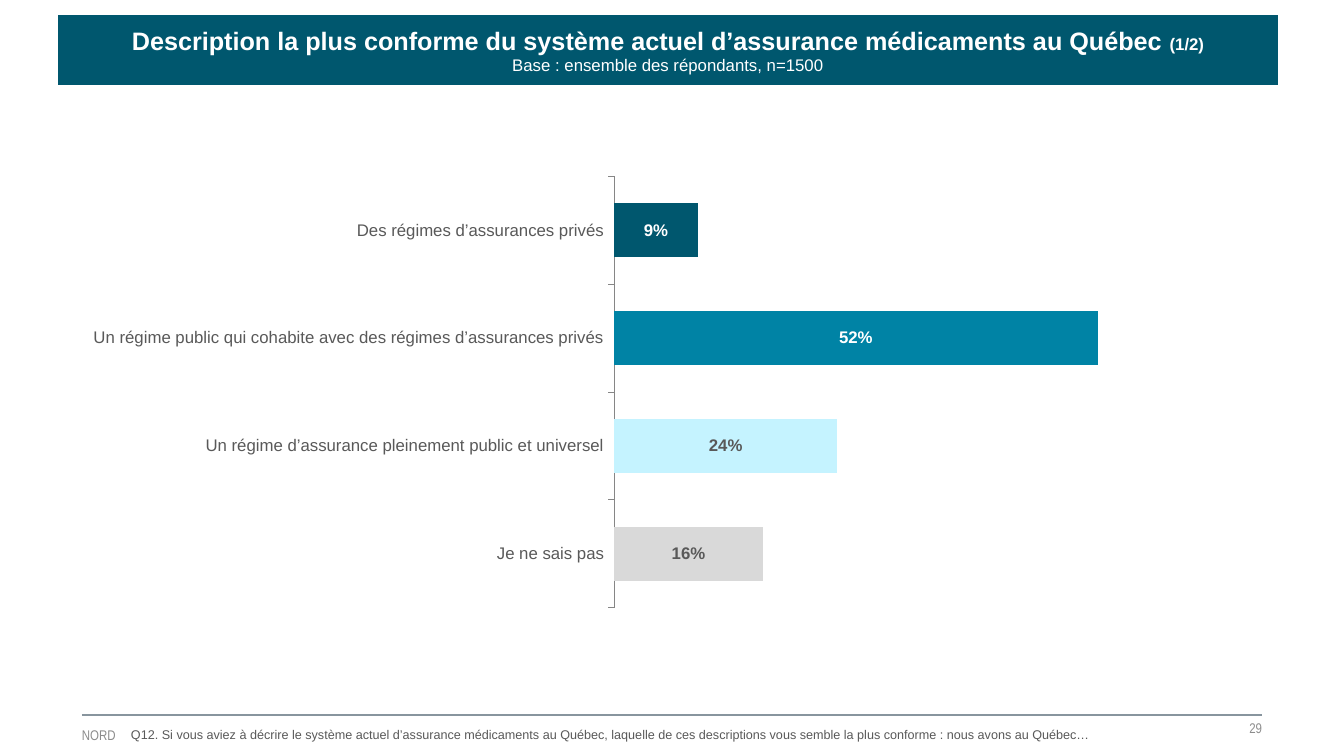
from lxml import etree
from pptx import Presentation
from pptx.chart.data import CategoryChartData
from pptx.dml.color import RGBColor
from pptx.enum.chart import XL_CHART_TYPE, XL_LABEL_POSITION, XL_TICK_MARK
from pptx.enum.shapes import MSO_CONNECTOR
from pptx.enum.text import MSO_ANCHOR, MSO_AUTO_SIZE, PP_ALIGN
from pptx.oxml.ns import qn
from pptx.util import Pt

BAR_CLUSTERED = XL_CHART_TYPE.BAR_CLUSTERED
LABEL_CENTER = XL_LABEL_POSITION.CENTER
TICK_OUT, TICK_NONE = XL_TICK_MARK.OUTSIDE, XL_TICK_MARK.NONE
STRAIGHT = MSO_CONNECTOR.STRAIGHT
MIDDLE, TOP = MSO_ANCHOR.MIDDLE, MSO_ANCHOR.TOP
LEFT, CENTER, RIGHT = PP_ALIGN.LEFT, PP_ALIGN.CENTER, PP_ALIGN.RIGHT

EMU_PER_PX = 914400 / 100.8
TEAL, WHITE, DARK_GREY, FOOTER_GREY = "00576E", "FFFFFF", "595959", "8C8C8C"

# Title lines: runs of (text, size, bold)
TITLE_LINES = [
    [("Description la plus conforme du système actuel d’assurance médicaments au Québec ", 18, True),
     ("(1/2)", 12, True)],
    [("Base : ensemble des répondants, n=1500", 12, False)],
]
TITLE_BOX = (58, 15, 1220, 70)

# Answer, share, bar colour, label colour
ANSWERS = [
    ("Des régimes d’assurances privés", 0.09, TEAL, WHITE),
    ("Un régime public qui cohabite avec des régimes d’assurances privés", 0.52, "0083A5", WHITE),
    ("Un régime d’assurance pleinement public et universel", 0.24, "C5F3FF", DARK_GREY),
    ("Je ne sais pas", 0.16, "D9D9D9", DARK_GREY),
]
CHART_BOX = (10, 167, 1162, 474)
PLOT_AREA = {"x": 0.52, "y": 0.02, "w": 0.48, "h": 0.91}

# Text, box, size, font, colour, alignment, anchor, (side inset, top inset)
FOOTER = [
    ("29", (880, 715, 382, 26), 10, "Arial Narrow", FOOTER_GREY, RIGHT, MIDDLE, (0, 0)),
    ("NORD", (82, 722, 376, 26), 10, "Arial Narrow", FOOTER_GREY, LEFT, MIDDLE, (0, 0)),
    ("Q12. Si vous aviez à décrire le système actuel d’assurance médicaments au Québec, "
     "laquelle de ces descriptions vous semble la plus conforme\u00a0: nous avons au Québec…",
     (121, 722, 1139, 25), 9, "Arial", DARK_GREY, LEFT, TOP, (10, 5)),
]
FOOTER_RULE = (82, 715, 1262, 715)


def px(*lengths):
    return [round(length * EMU_PER_PX) for length in lengths]


def rgb(code):
    return RGBColor.from_string(code)


def style(font, size, color, name="Arial", bold=False):
    font.size, font.name, font.bold = Pt(size), name, bold
    font.color.rgb = rgb(color)


def set_frame(frame, anchor, insets):
    side, top = px(*insets)
    frame.word_wrap = True
    frame.auto_size = MSO_AUTO_SIZE.NONE
    frame.vertical_anchor = anchor
    frame.margin_left = frame.margin_right = side
    frame.margin_top = frame.margin_bottom = top


def add_title(slide):
    title = slide.shapes.title
    title.left, title.top, title.width, title.height = px(*TITLE_BOX)
    title.fill.solid()
    title.fill.fore_color.rgb = rgb(TEAL)
    frame = title.text_frame
    set_frame(frame, MIDDLE, (0, 0))
    for index, line in enumerate(TITLE_LINES):
        paragraph = frame.add_paragraph() if index else frame.paragraphs[0]
        paragraph.alignment = CENTER
        for text, size, bold in line:
            run = paragraph.add_run()
            run.text = text
            style(run.font, size, WHITE, bold=bold)


def fix_plot_area(chart):
    """Pin the inner plot area to fractions of the chart."""
    plot_area = chart.element.find(".//" + qn("c:plotArea"))
    for automatic in plot_area.findall(qn("c:layout")):
        plot_area.remove(automatic)
    layout = etree.Element(qn("c:layout"))
    plot_area.insert(0, layout)
    manual = etree.SubElement(layout, qn("c:manualLayout"))
    settings = [("layoutTarget", "inner"), ("xMode", "edge"), ("yMode", "edge")]
    for tag, value in settings + list(PLOT_AREA.items()):
        etree.SubElement(manual, qn("c:" + tag)).set("val", str(value))


def add_answer_chart(slide):
    data = CategoryChartData(number_format="0%")
    data.categories = [answer[0] for answer in ANSWERS]
    data.add_series("Répondants", [answer[1] for answer in ANSWERS])
    chart = slide.shapes.add_chart(BAR_CLUSTERED, *px(*CHART_BOX), data).chart
    chart.has_legend = chart.has_title = False
    style(chart.font, 12, DARK_GREY)
    fix_plot_area(chart)

    answers_axis = chart.category_axis
    answers_axis.reverse_order = True
    answers_axis.major_tick_mark = TICK_OUT
    answers_axis.minor_tick_mark = TICK_NONE
    answers_axis.has_major_gridlines = False
    answers_axis.format.line.color.rgb = rgb("868686")
    answers_axis.format.line.width = Pt(0.75)
    style(answers_axis.tick_labels.font, 12, DARK_GREY)

    share_axis = chart.value_axis
    share_axis.minimum_scale, share_axis.maximum_scale = 0, 0.6
    share_axis.has_major_gridlines = False
    share_axis.visible = False

    plot = chart.plots[0]
    plot.gap_width = 100
    plot.vary_by_categories = False
    bars = plot.series[0]
    bars.format.fill.solid()
    bars.format.fill.fore_color.rgb = rgb(TEAL)
    labels = bars.data_labels
    labels.show_value = True
    labels.number_format, labels.number_format_is_linked = "0%", False
    labels.position = LABEL_CENTER
    style(labels.font, 12, WHITE, bold=True)
    for index, (_, _, bar_color, label_color) in enumerate(ANSWERS):
        point = bars.points[index]
        point.format.fill.solid()
        point.format.fill.fore_color.rgb = rgb(bar_color)
        style(point.data_label.font, 12, label_color, bold=True)
        point.data_label.position = LABEL_CENTER


def add_footer(slide):
    rule = slide.shapes.add_connector(STRAIGHT, *px(*FOOTER_RULE))
    rule.line.color.rgb = rgb("88959E")
    rule.line.width = Pt(1.5)
    etree.SubElement(rule.element.spPr, qn("a:effectLst"))
    for text, box, size, font, color, alignment, anchor, insets in FOOTER:
        frame = slide.shapes.add_textbox(*px(*box)).text_frame
        set_frame(frame, anchor, insets)
        frame.text = text
        paragraph = frame.paragraphs[0]
        paragraph.alignment = alignment
        style(paragraph.runs[0].font, size, color, font)


def main():
    deck = Presentation()
    deck.slide_width, deck.slide_height = px(1344, 756)
    slide = deck.slides.add_slide(deck.slide_layouts[5])
    add_footer(slide)
    add_answer_chart(slide)
    add_title(slide)
    deck.save("out.pptx")


if __name__ == "__main__":
    main()
